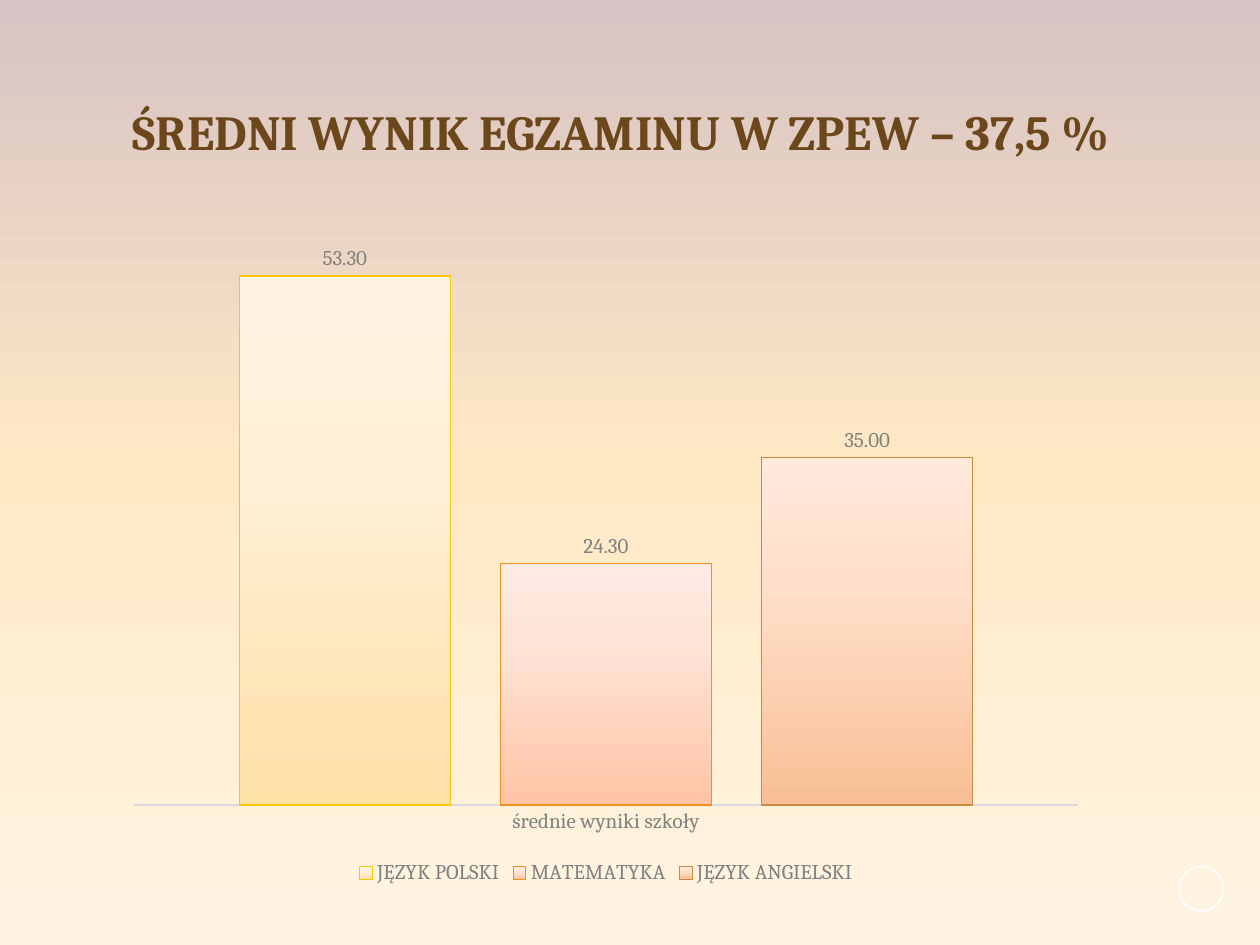
from copy import deepcopy

from pptx import Presentation
from pptx.chart.data import CategoryChartData
from pptx.dml.color import RGBColor
from pptx.enum.chart import XL_CHART_TYPE, XL_LABEL_POSITION, XL_LEGEND_POSITION, XL_TICK_MARK
from pptx.enum.shapes import MSO_SHAPE
from pptx.enum.text import MSO_ANCHOR, PP_ALIGN
from pptx.util import Inches, Pt

FONT = "Cambria"
BROWN, GRAY, LIGHT_GRAY, WHITE = "6B471B", "808080", "D9D9D9", "FFFFFF"
BACKGROUND = [(0, "D7C3C3"), (0.5, "FFE9C5"), (1, "FFF4E3")]
# Subject, result, bar colours from bottom to top, outline
RESULTS = [
    ("JĘZYK POLSKI", 53.3, ("FFE0A7", "FFF0D8", "FFF4E4"), "F9C608"),
    ("MATEMATYKA", 24.3, ("FFC4A4", "FFE3D6", "FFEBE2"), "F3901C"),
    ("JĘZYK ANGIELSKI", 35, ("F8BF96", "FFE0CB", "FFE9DB"), "C98A3D"),
]
BAR_STOPS = (0, 0.65, 1)


def color(hex_string):
    return RGBColor.from_string(hex_string)


def set_font(font, size, hex_string, bold=False):
    font.name = FONT
    font.size = Pt(size)
    font.bold = bold
    font.color.rgb = color(hex_string)


def set_line(line, hex_string, width):
    line.color.rgb = color(hex_string)
    line.width = Pt(width)


def set_gradient(fill, owner, stops, angle):
    """Fill with three stops; owner is the XML element that holds the fill."""
    fill.gradient()
    stop_list = owner.xpath(".//a:gsLst")[0]
    stop_list.append(deepcopy(stop_list[-1]))
    for stop, (position, hex_string) in zip(fill.gradient_stops, stops):
        stop.position = position
        stop.color.rgb = color(hex_string)
    fill.gradient_angle = angle


class ResultSlide:
    def __init__(self, presentation):
        self.width = presentation.slide_width
        self.height = presentation.slide_height
        self.slide = presentation.slides.add_slide(presentation.slide_layouts[6])
        self.shapes = self.slide.shapes

    def place(self, left, top, width, height):
        """Turn shares of the slide's size into lengths."""
        return (round(left * self.width), round(top * self.height),
                round(width * self.width), round(height * self.height))

    def background(self, stops):
        set_gradient(self.slide.background.fill, self.slide.element, stops, 270)

    def circle(self, *shares):
        shape = self.shapes.add_shape(MSO_SHAPE.OVAL, *self.place(*shares))
        shape.shadow.inherit = False
        shape.fill.background()
        set_line(shape.line, WHITE, 1)

    def title(self, text, *shares):
        text_frame = self.shapes.add_textbox(*self.place(*shares)).text_frame
        text_frame.word_wrap = True
        text_frame.vertical_anchor = MSO_ANCHOR.MIDDLE
        text_frame.text = text
        paragraph = text_frame.paragraphs[0]
        paragraph.alignment = PP_ALIGN.CENTER
        paragraph.line_spacing = 0.9
        set_font(paragraph.runs[0].font, 28, BROWN, bold=True)

    def column_chart(self, category, results, *shares):
        data = CategoryChartData(number_format="0.00")
        data.categories = [category]
        for name, value, *_ in results:
            data.add_series(name, [value])
        chart = self.shapes.add_chart(
            XL_CHART_TYPE.COLUMN_CLUSTERED, *self.place(*shares), data).chart
        chart.has_title = False
        set_font(chart.font, 12, GRAY)
        chart.has_legend = True
        chart.legend.position = XL_LEGEND_POSITION.BOTTOM
        chart.legend.include_in_layout = False
        set_font(chart.legend.font, 12, GRAY)

        chart.value_axis.visible = False
        chart.value_axis.has_major_gridlines = False
        chart.value_axis.minimum_scale = 0
        axis = chart.category_axis
        axis.major_tick_mark = XL_TICK_MARK.NONE
        set_line(axis.format.line, LIGHT_GRAY, 0.75)
        set_font(axis.tick_labels.font, 12, GRAY)

        plot = chart.plots[0]
        plot.vary_by_categories = False
        plot.gap_width = 100
        plot.overlap = -24
        for series, (_, _, shades, outline) in zip(plot.series, results):
            self.style_series(series, shades, outline)

    def style_series(self, series, shades, outline):
        set_gradient(series.format.fill, series._element, zip(BAR_STOPS, shades), 90)
        set_line(series.format.line, outline, 0.75)
        labels = series.data_labels
        labels.show_value = True
        labels.position = XL_LABEL_POSITION.OUTSIDE_END
        labels.number_format = "0.00"
        labels.number_format_is_linked = False
        set_font(labels.font, 12, GRAY)


def main():
    presentation = Presentation()
    presentation.slide_width, presentation.slide_height = Inches(10), Inches(7.5)
    slide = ResultSlide(presentation)
    slide.background(BACKGROUND)
    slide.circle(0.936, 0.917, 0.035, 0.047)
    slide.title("ŚREDNI WYNIK EGZAMINU W ZPEW – 37,5 %", 0.043, 0.08, 0.9, 0.125)
    slide.column_chart("średnie wyniki szkoły", RESULTS, 0.091, 0.207, 0.78, 0.735)
    presentation.save("out.pptx")


if __name__ == "__main__":
    main()
